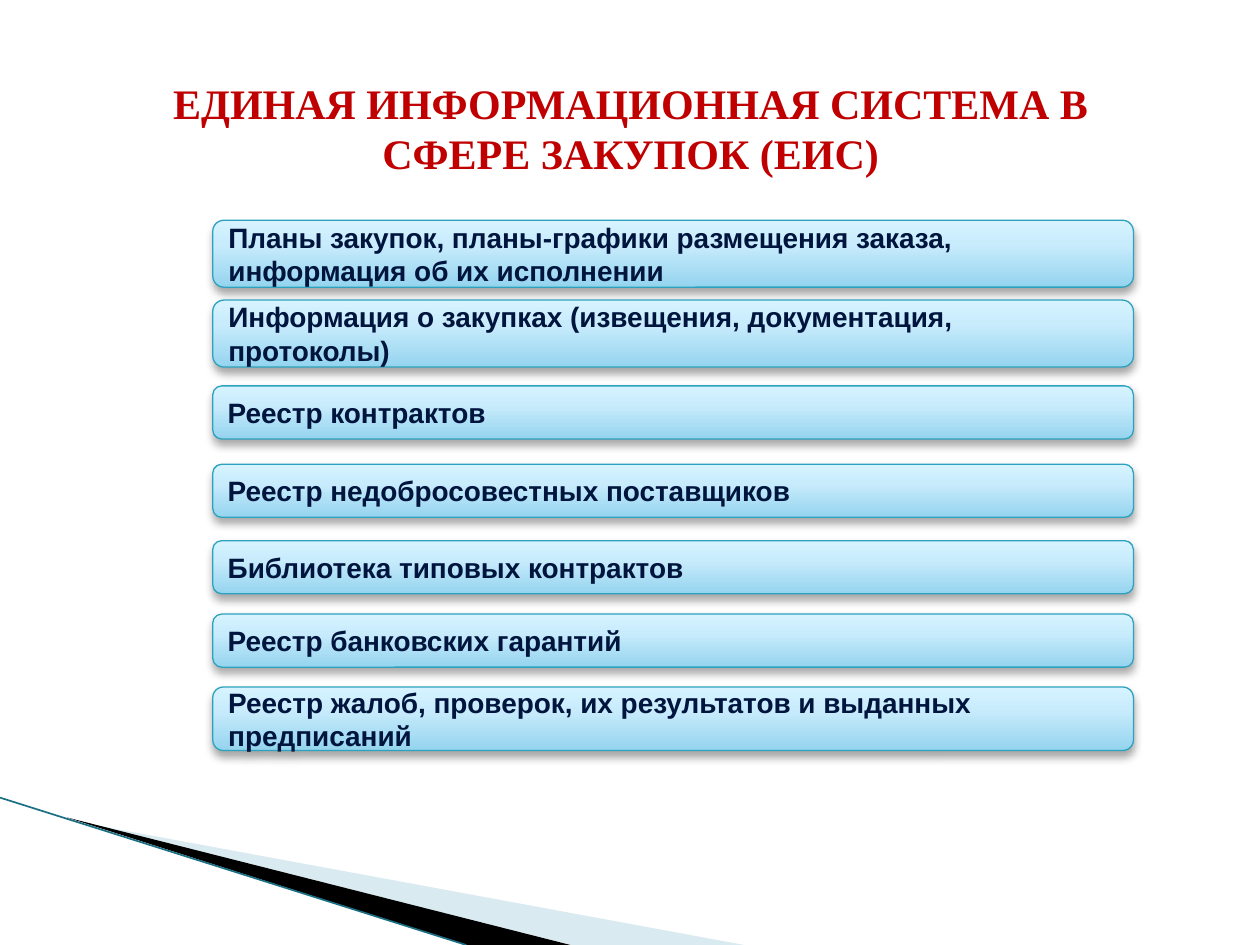
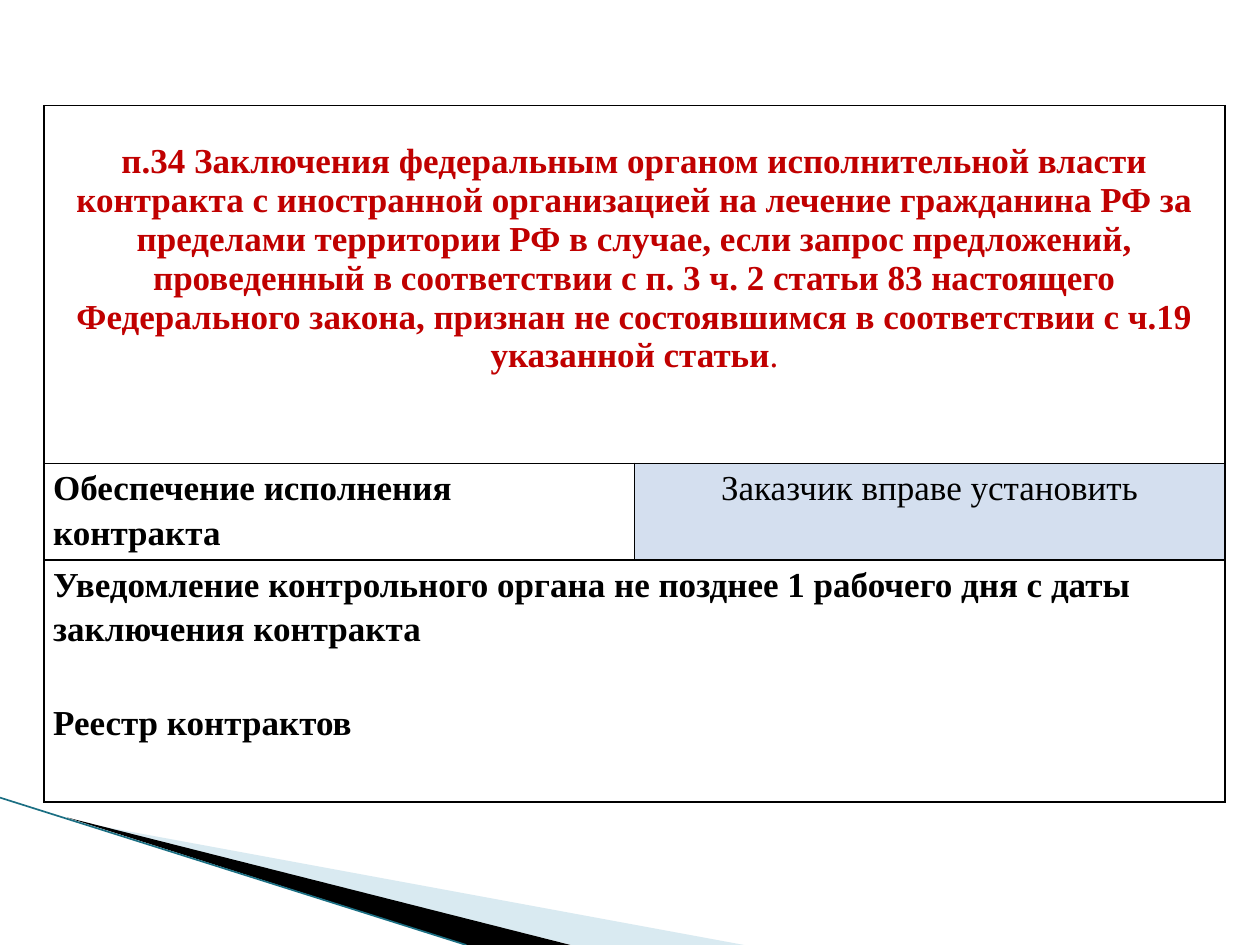
import pptx
import pptx.dml.color
import pptx.enum.shapes
import pptx.enum.text
import pptx.oxml
import pptx.oxml.ns
import pptx.util
from pptx.util import Cm

COLORS = {
    "title": "C00000", "bar_text": "00153E", "bar_line": "2DA2BF",
    "black": "000000", "pale": "A0CBDC", "edge": "1B6F83", "cell": "D4DFEF",
}
BAR_GRADIENT = [(0, "95D4EE"), (65, "C9ECFD"), (100, "D6F3FF")]
SERIF = "Times New Roman"
CENTER = pptx.enum.text.PP_ALIGN.CENTER
LEFT = pptx.enum.text.PP_ALIGN.LEFT
MIDDLE = pptx.enum.text.MSO_ANCHOR.MIDDLE


def color(name):
    return pptx.dml.color.RGBColor.from_string(COLORS[name])


def xml(markup):
    head, tail = markup.split(">", 1)
    slash = "/" if head.endswith("/") else ""
    return pptx.oxml.parse_xml(f"{head.rstrip('/')} {pptx.oxml.ns.nsdecls('a')}{slash}>{tail}")


def write(paragraph, text, font=SERIF, size=20, bold=True, fill="black",
          align=LEFT, line_spacing=None, before=None):
    paragraph.alignment = align
    if line_spacing:
        paragraph.line_spacing = line_spacing
    if before:
        paragraph.space_before = pptx.util.Pt(before)
    run = paragraph.add_run()
    run.text = text
    run.font.name = font
    run.font.size = pptx.util.Pt(size)
    run.font.bold = bold
    run.font.color.rgb = color(fill)


def add_wedge(slide, points, fill, alpha=100):
    corners = [(Cm(x), Cm(y)) for x, y in points]
    builder = slide.shapes.build_freeform(*corners[0])
    builder.add_line_segments(corners[1:])
    shape = builder.convert_to_shape()
    shape.shadow.inherit = False
    shape.fill.solid()
    shape.fill.fore_color.rgb = color(fill)
    shape.line.fill.background()
    if alpha < 100:
        fill_color = shape.element.spPr.find(".//" + pptx.oxml.ns.qn("a:srgbClr"))
        fill_color.append(xml(f'<a:alpha val="{alpha * 1000}"/>'))


def add_corner(slide):
    add_wedge(slide, [(1.4, 16.54), (15, 19.05), (11.52, 19.05)], "pale", alpha=40)
    add_wedge(slide, [(1.35, 16.48), (11.5, 19.05), (9.4, 19.05)], "black")
    line = slide.shapes.add_connector(
        pptx.enum.shapes.MSO_CONNECTOR.STRAIGHT, Cm(0), Cm(16.08), Cm(9.4), Cm(19.05))
    line.line.color.rgb = color("edge")
    line.line.width = pptx.util.Pt(0.95)
    line.element.spPr.append(xml("<a:effectLst/>"))


def add_slide(presentation):
    slide = presentation.slides.add_slide(presentation.slide_layouts[6])
    add_corner(slide)
    return slide


def add_title(slide, text):
    box = slide.shapes.add_textbox(Cm(2.44), Cm(1.42), Cm(20.55), Cm(2.31))
    box.text_frame.word_wrap = True
    box.text_frame.vertical_anchor = MIDDLE
    write(box.text_frame.paragraphs[0], text, size=24, fill="title", align=CENTER)


def add_bar(slide, text, top, height):
    bar = slide.shapes.add_shape(
        pptx.enum.shapes.MSO_SHAPE.ROUNDED_RECTANGLE,
        Cm(4.29), Cm(top), Cm(18.56), Cm(height))
    bar.fill.gradient()
    bar.fill.gradient_angle = 90
    stops = bar.element.spPr.find(".//" + pptx.oxml.ns.qn("a:gsLst"))
    for stop in list(stops):
        stops.remove(stop)
    for position, value in BAR_GRADIENT:
        stops.append(xml(f'<a:gs pos="{position * 1000}"><a:srgbClr val="{value}"/></a:gs>'))
    bar.line.color.rgb = color("bar_line")
    bar.line.width = pptx.util.Pt(0.75)
    bar.shadow.inherit = False
    effects = bar.element.spPr.find(pptx.oxml.ns.qn("a:effectLst"))
    effects.append(xml(
        f'<a:outerShdw blurRad="{pptx.util.Pt(5)}" dist="{pptx.util.Pt(3)}" dir="5400000" '
        f'rotWithShape="0"><a:srgbClr val="{COLORS["black"]}"><a:alpha val="35000"/>'
        '</a:srgbClr></a:outerShdw>'))
    bar.text_frame.word_wrap = True
    bar.text_frame.vertical_anchor = MIDDLE
    write(bar.text_frame.paragraphs[0], text, font="Arial", size=16, fill="bar_text")


def format_cell(cell, fill=None, top=0):
    cell.margin_left = cell.margin_right = Cm(0.18)
    cell.margin_top, cell.margin_bottom = Cm(top), Cm(0)
    properties = cell._tc.get_or_add_tcPr()
    for side in ("lnL", "lnR", "lnT", "lnB"):
        properties.append(xml(
            f'<a:{side} w="{pptx.util.Pt(1)}"><a:solidFill>'
            f'<a:srgbClr val="{COLORS["black"]}"/></a:solidFill></a:{side}>'))
    if fill:
        cell.fill.solid()
        cell.fill.fore_color.rgb = color(fill)
    else:
        cell.fill.background()


def add_contract_table(slide):
    row_heights = [7.21, 1.95, 4.88]
    column_width = 11.9
    table = slide.shapes.add_table(
        3, 2, Cm(0.89), Cm(2.13), Cm(2 * column_width), Cm(sum(row_heights))).table
    table.first_row = table.horz_banding = False
    for column in table.columns:
        column.width = Cm(column_width)
    for row, height in zip(table.rows, row_heights):
        row.height = Cm(height)
        for cell in row.cells:
            format_cell(cell)
    for index in (0, 2):
        table.cell(index, 0).merge(table.cell(index, 1))
    table.cell(0, 0).margin_top = Cm(0.74)
    table.cell(1, 1).fill.solid()
    table.cell(1, 1).fill.fore_color.rgb = color("cell")

    clause = table.cell(0, 0).text_frame.paragraphs[0]
    write(clause, "п.34 Заключения федеральным органом исполнительной власти контракта "
          "с иностранной организацией на лечение гражданина РФ за пределами территории РФ "
          "в случае, если запрос предложений, проведенный в соответствии с п. 3 ч. 2 "
          "статьи 83 настоящего Федерального закона, признан не состоявшимся "
          "в соответствии с ч.19 указанной статьи", fill="title", align=CENTER)
    write(clause, ".", bold=False, fill="title", align=CENTER)
    write(table.cell(1, 0).text_frame.paragraphs[0],
          "Обеспечение исполнения контракта", line_spacing=1.15)
    write(table.cell(1, 1).text_frame.paragraphs[0],
          "Заказчик вправе установить", bold=False, align=CENTER, line_spacing=1.15)
    notice = table.cell(2, 0).text_frame
    write(notice.paragraphs[0], "Уведомление контрольного органа не позднее "
          "1 рабочего дня с даты заключения контракта", line_spacing=1.15)
    write(notice.add_paragraph(), "Реестр контрактов", line_spacing=1.15, before=28)


def main():
    presentation = pptx.Presentation()
    presentation.slide_width, presentation.slide_height = Cm(25.4), Cm(19.05)

    system_slide = add_slide(presentation)
    add_title(system_slide, "ЕДИНАЯ ИНФОРМАЦИОННАЯ СИСТЕМА В СФЕРЕ ЗАКУПОК (ЕИС)")
    for text, top, height in [
        ("Планы закупок, планы-графики размещения заказа, информация об их исполнении",
         4.44, 1.35),
        ("Информация о закупках (извещения, документация, протоколы)", 6.05, 1.35),
        ("Реестр контрактов", 7.78, 1.07),
        ("Реестр недобросовестных поставщиков", 9.36, 1.07),
        ("Библиотека типовых контрактов", 10.9, 1.07),
        ("Реестр банковских гарантий", 12.38, 1.07),
        ("Реестр жалоб, проверок, их результатов и выданных предписаний", 13.85, 1.28),
    ]:
        add_bar(system_slide, text, top, height)

    add_contract_table(add_slide(presentation))
    presentation.save("out.pptx")


if __name__ == "__main__":
    main()
